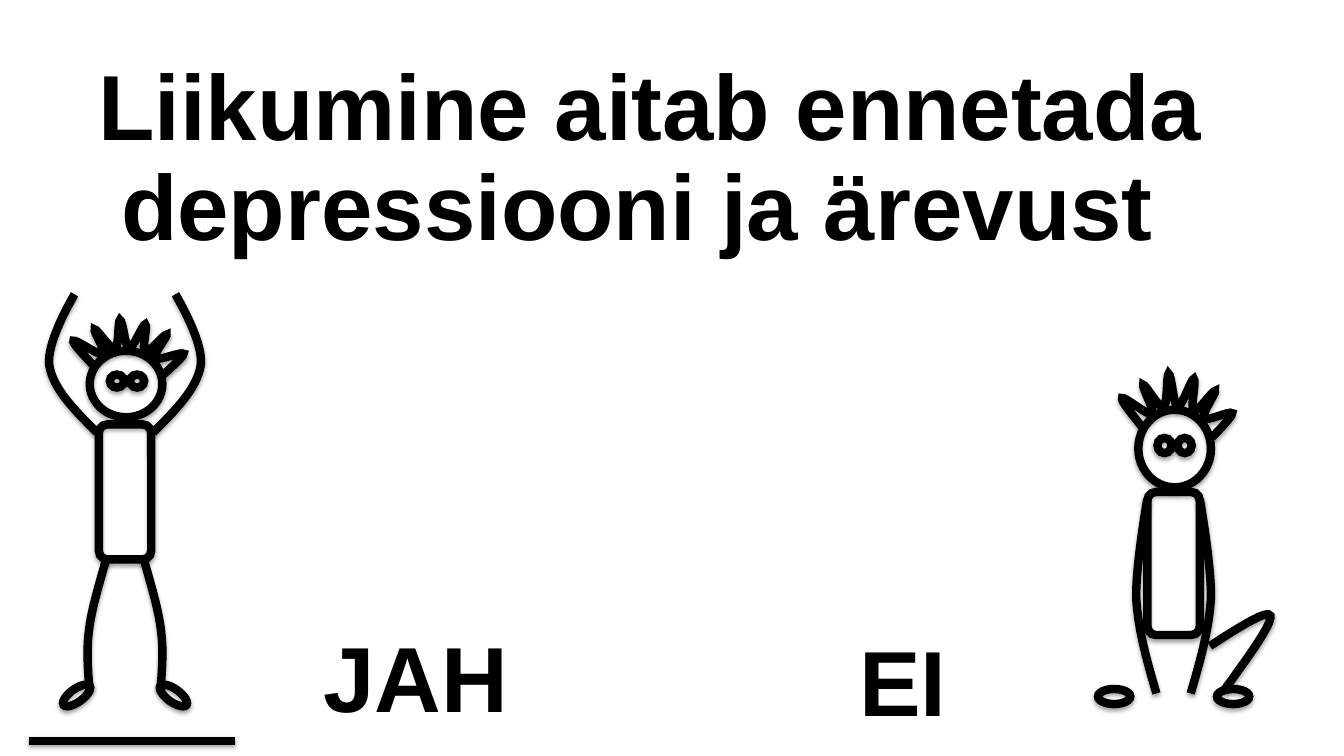
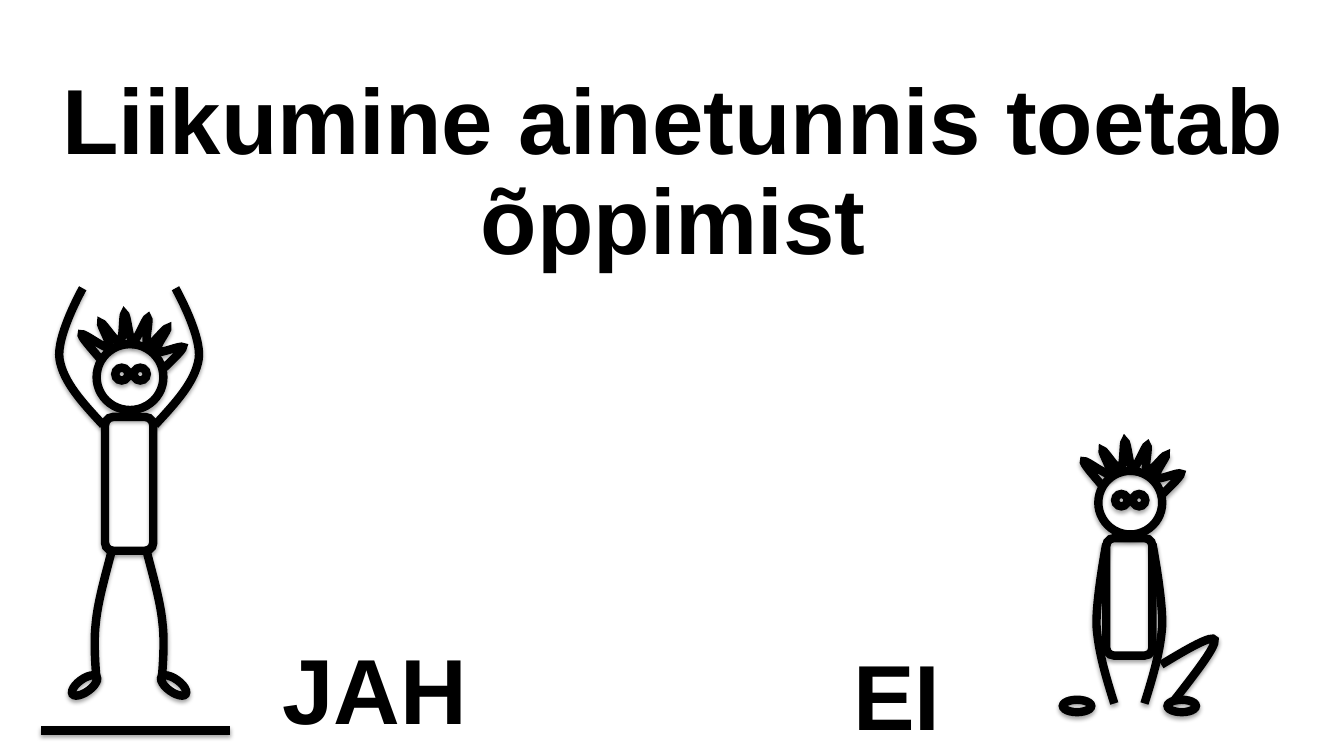
"""Build two movement statements, each with a standing "JAH" and a sitting "EI" figure."""
import lxml.etree
import pptx
import pptx.dml.color
import pptx.enum.shapes
import pptx.enum.text
import pptx.oxml.ns
import pptx.util

Inches = pptx.util.Inches
Pt = pptx.util.Pt
Shapes = pptx.enum.shapes.MSO_SHAPE
qn = pptx.oxml.ns.qn

BLACK = pptx.dml.color.RGBColor(0x00, 0x00, 0x00)
WHITE = pptx.dml.color.RGBColor(0xFF, 0xFF, 0xFF)
FONT = "Arial"
TEXT_SIZE = Pt(66)
STROKE = Pt(6)
BODY_AXIS = -0.01

HAIR = [
    (-0.32, -0.21), (-0.43, -0.35), (-0.54, -0.48), (-0.52, -0.50),
    (-0.50, -0.52), (-0.26, -0.32), (-0.22, -0.34),
    (-0.19, -0.36), (-0.33, -0.62), (-0.31, -0.63),
    (-0.29, -0.64), (-0.15, -0.39), (-0.11, -0.41),
    (-0.07, -0.42), (-0.08, -0.74), (-0.06, -0.74),
    (-0.03, -0.74), (-0.01, -0.42), (0.03, -0.41),
    (0.07, -0.41), (0.17, -0.70), (0.19, -0.69),
    (0.22, -0.68), (0.15, -0.39), (0.19, -0.37),
    (0.22, -0.35), (0.38, -0.58), (0.40, -0.57),
    (0.42, -0.56), (0.26, -0.34), (0.29, -0.30),
    (0.31, -0.26), (0.55, -0.38), (0.57, -0.35),
    (0.58, -0.32), (0.37, -0.11), (0.37, -0.11),
]
HAIR_HEAD_HEIGHT = 0.77
RAISED_ARM = [(0.27, 1.37), (0.49, 1.15), (0.70, 0.94), (0.74, 0.71),
              (0.78, 0.48), (0.49, 0), (0.49, 0)]
STANDING_LEG = [(0.18, 2.64), (0.25, 2.89), (0.33, 3.15), (0.35, 3.36),
                (0.38, 3.58), (0.34, 3.93), (0.34, 3.93)]
LOWERED_ARM = [(0.16, 3.17), (0.25, 2.86), (0.34, 2.55), (0.36, 2.23),
               (0.37, 1.91), (0.25, 1.24), (0.25, 1.24)]
BENT_LEG = [(0.35, 2.70), (0.64, 2.51), (0.93, 2.33), (0.95, 2.40),
            (0.97, 2.48), (0.73, 2.81), (0.49, 3.14)]


class MovementDeck:
    def __init__(self):
        self.deck = pptx.Presentation()
        self.deck.slide_width = Inches(13.33)
        self.deck.slide_height = Inches(7.5)
        self.page = None
        self.group = None
        self.frame = None

    def add_page(self):
        self.page = self.deck.slides.add_slide(self.deck.slide_layouts[6])
        self.page.background.fill.solid()
        self.page.background.fill.fore_color.rgb = WHITE

    def text(self, wording, left, top, width, height, line_spacing=None):
        box = self.page.shapes.add_textbox(
            Inches(left), Inches(top), Inches(width), Inches(height))
        frame = box.text_frame
        frame.word_wrap = True
        frame.vertical_anchor = pptx.enum.text.MSO_ANCHOR.MIDDLE
        frame.margin_left = frame.margin_right = Inches(0.13)
        frame.margin_top = frame.margin_bottom = Inches(0.07)
        para = frame.paragraphs[0]
        para.text = wording
        para.alignment = pptx.enum.text.PP_ALIGN.CENTER
        para.line_spacing = line_spacing
        para.font.name = FONT
        para.font.size = TEXT_SIZE
        para.font.bold = True
        para.font.color.rgb = BLACK

    def title(self, wording, left, top, height):
        self.text(wording, left, top, 12.9, height, line_spacing=0.9)

    def start_figure(self, axis, top, scale_x, scale_y):
        self.group = self.page.shapes.add_group_shape()
        self.frame = (axis, top, scale_x, scale_y)

    def place(self, x, y):
        axis, top, scale_x, scale_y = self.frame
        return Inches(axis + x * scale_x), Inches(top + y * scale_y)

    def stroke(self, shape):
        shape.line.color.rgb = BLACK
        shape.line.width = STROKE
        properties = shape.element.spPr
        lxml.etree.SubElement(properties.find(qn("a:ln")), qn("a:miter"), lim="800000")
        effects = lxml.etree.SubElement(properties, qn("a:effectLst"))
        shadow = lxml.etree.SubElement(
            effects, qn("a:outerShdw"), blurRad=str(Pt(3.1)), dist=str(Pt(1.8)),
            dir="5400000", rotWithShape="0")
        color = lxml.etree.SubElement(shadow, qn("a:srgbClr"), val=str(BLACK))
        lxml.etree.SubElement(color, qn("a:alpha"), val="35000")

    def outline(self, kind, center_x, center_y, width, height, rotation=0):
        left, top = self.place(center_x - width / 2, center_y - height / 2)
        right, bottom = self.place(center_x + width / 2, center_y + height / 2)
        shape = self.group.shapes.add_shape(kind, left, top, right - left, bottom - top)
        shape.rotation = rotation
        shape.fill.background()
        self.stroke(shape)

    def curve(self, controls):
        points = [self.place(x, y) for x, y in controls]
        anchors = points[::3]
        builder = self.group.shapes.build_freeform(*anchors[0], scale=1.0)
        builder.add_line_segments(anchors[1:], close=False)
        shape = builder.convert_to_shape()
        left = min(x for x, y in anchors)
        top = min(y for x, y in anchors)
        segments = list(shape.element.spPr.iter(qn("a:lnTo")))
        for index, segment in enumerate(segments):
            bezier = lxml.etree.Element(qn("a:cubicBezTo"))
            for x, y in points[3 * index + 1:3 * index + 4]:
                lxml.etree.SubElement(bezier, qn("a:pt"), x=str(x - left), y=str(y - top))
            segment.getparent().replace(segment, bezier)
        shape.fill.background()
        self.stroke(shape)

    def mirrored_curves(self, controls):
        self.curve(controls)
        self.curve([(2 * BODY_AXIS - x, y) for x, y in controls])

    def ground(self, left, right, y):
        line = self.group.shapes.add_connector(
            pptx.enum.shapes.MSO_CONNECTOR.STRAIGHT,
            *self.place(left, y), *self.place(right, y))
        self.stroke(line)

    def head(self, center_y, height, eye_shift=0):
        stretch = height / HAIR_HEAD_HEIGHT
        self.outline(Shapes.OVAL, 0, center_y, 0.72, height)
        self.curve([(x, center_y + y * stretch) for x, y in HAIR])
        for eye_x in (-0.1, 0.1):
            self.outline(Shapes.OVAL, eye_x + eye_shift, center_y - 0.03,
                         0.14, 0.15 * stretch)

    def standing_figure(self, axis, top, scale_x=1, scale_y=1):
        self.start_figure(axis, top, scale_x, scale_y)
        self.outline(Shapes.ROUNDED_RECTANGLE, BODY_AXIS, 1.96, 0.52, 1.34)
        self.head(0.89, 0.66, eye_shift=0.01)
        self.mirrored_curves(STANDING_LEG)
        self.mirrored_curves(RAISED_ARM)
        for side in (-1, 1):
            self.outline(Shapes.OVAL, BODY_AXIS + side * 0.48, 3.98, 0.32, 0.13, side * 36)
        self.ground(-0.96, 1.08, 4.43)

    def sitting_figure(self, axis, top, scale_x=1, scale_y=1):
        self.start_figure(axis, top, scale_x, scale_y)
        self.outline(Shapes.ROUNDED_RECTANGLE, BODY_AXIS, 1.88, 0.52, 1.42)
        self.head(0.74, 0.77)
        self.mirrored_curves(LOWERED_ARM)
        self.curve(BENT_LEG)
        for side in (-1, 1):
            self.outline(Shapes.OVAL, BODY_AXIS + side * 0.59, 3.2, 0.32, 0.15)


def main():
    movement = MovementDeck()

    movement.add_page()
    movement.title("Liikumine aitab ennetada depressiooni ja ärevust ", 0, -0.69, 4.57)
    movement.sitting_figure(11.65, 3.71)
    movement.standing_figure(1.25, 2.92)
    movement.text("JAH", 2.66, 5.91, 2.93, 1.59)
    movement.text("EI", 7.51, 6.04, 2.89, 1.41)

    movement.add_page()
    movement.title("Liikumine ainetunnis toetab õppimist", 0.23, -0.21, 3.89)
    movement.sitting_figure(11.21, 4.38, 0.88, 0.82)
    movement.standing_figure(1.29, 2.86, 0.92, 0.99)
    movement.text("JAH", 1.87, 6.15, 3.7, 1.35)
    movement.text("EI", 7.3, 6.15, 3.19, 1.47)

    movement.deck.save("out.pptx")


if __name__ == "__main__":
    main()
